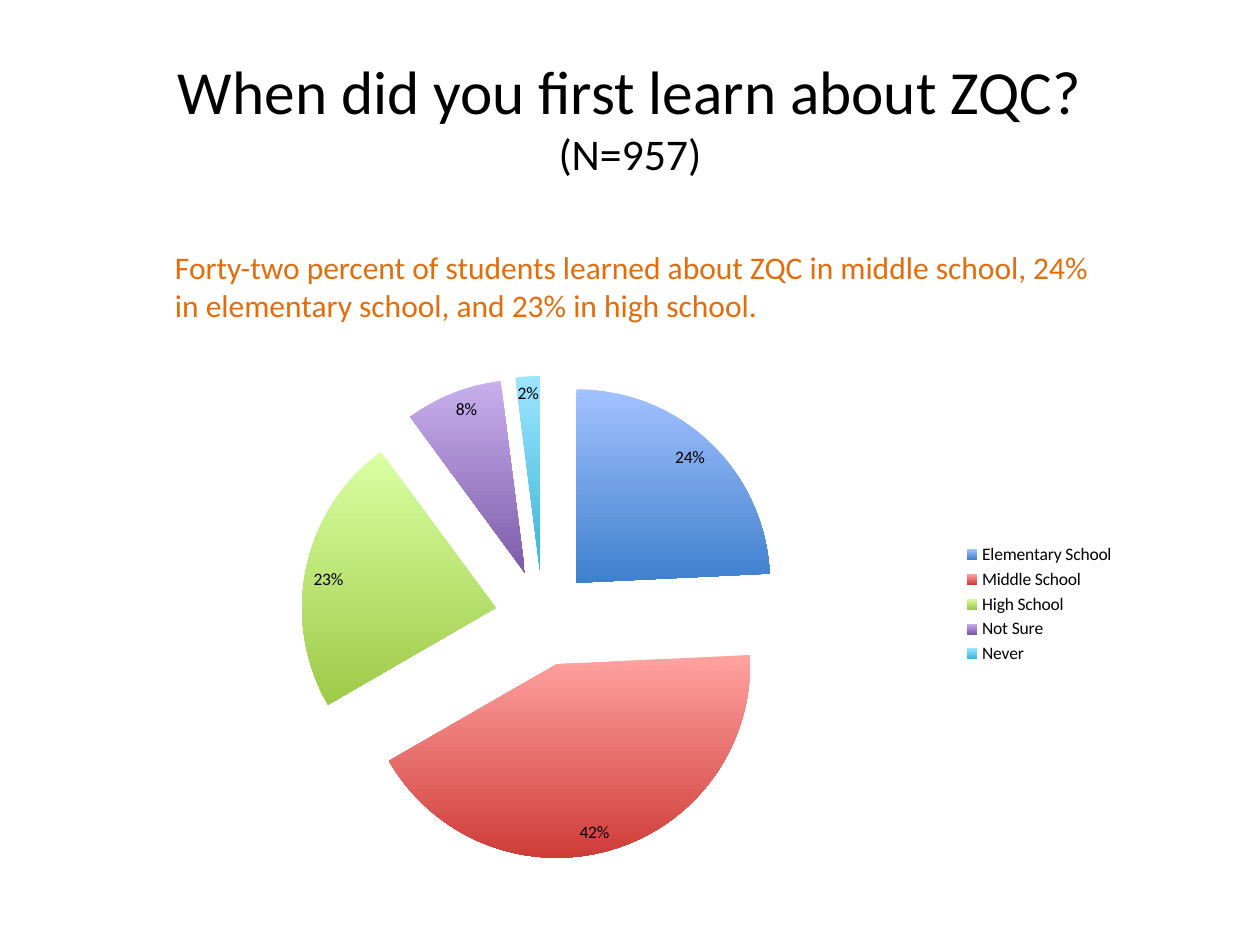
from typing import NamedTuple

from lxml import etree
from pptx import Presentation
from pptx.chart.data import CategoryChartData
from pptx.dml.color import RGBColor
from pptx.enum.chart import XL_CHART_TYPE, XL_LABEL_POSITION, XL_LEGEND_POSITION
from pptx.enum.text import MSO_ANCHOR, PP_ALIGN
from pptx.util import Inches, Pt

PIE = XL_CHART_TYPE.PIE_EXPLODED
INSIDE_END = XL_LABEL_POSITION.INSIDE_END
RIGHT = XL_LEGEND_POSITION.RIGHT
TOP, MIDDLE = MSO_ANCHOR.TOP, MSO_ANCHOR.MIDDLE
LEFT, CENTER = PP_ALIGN.LEFT, PP_ALIGN.CENTER

FONT = "Calibri"
COLLEGE = "ZQC"
BLACK = RGBColor(0x00, 0x00, 0x00)
ORANGE = RGBColor(0xE4, 0x6C, 0x0A)
CHART_NS = "http://schemas.openxmlformats.org/drawingml/2006/chart"


class Slice(NamedTuple):
    label: str
    share: float
    top_color: RGBColor
    bottom_color: RGBColor


SLICES = [
    Slice("Elementary School", 0.24, RGBColor(0xA3, 0xC1, 0xFF), RGBColor(0x3F, 0x80, 0xCD)),
    Slice("Middle School", 0.42, RGBColor(0xFF, 0xA3, 0xA1), RGBColor(0xCF, 0x3C, 0x38)),
    Slice("High School", 0.23, RGBColor(0xD9, 0xFF, 0xA2), RGBColor(0x9E, 0xCA, 0x48)),
    Slice("Not Sure", 0.08, RGBColor(0xC7, 0xAF, 0xED), RGBColor(0x7E, 0x5B, 0xA9)),
    Slice("Never", 0.02, RGBColor(0x9E, 0xE5, 0xFF), RGBColor(0x38, 0xB6, 0xD8)),
]


def add_text(page, text: str, *, left: float, top: float, width: float, height: float,
             sizes: list[float], color: RGBColor, align=LEFT, anchor=TOP) -> None:
    """Add one paragraph; each line of the text takes the matching size."""
    box = page.shapes.add_textbox(Inches(left), Inches(top), Inches(width), Inches(height))
    frame = box.text_frame
    frame.word_wrap = True
    frame.vertical_anchor = anchor
    para = frame.paragraphs[0]
    para.alignment = align
    for index, (line, size) in enumerate(zip(text.split("\n"), sizes)):
        if index:
            para.add_line_break()
        span = para.add_run()
        span.text = line
        span.font.name = FONT
        span.font.size = Pt(size)
        span.font.color.rgb = color


def place_plot(chart, **fractions: float) -> None:
    """Fix the inner plot area as fractions (x, y, w, h) of the chart."""
    plot_area = chart.plots[0]._element.getparent()
    for old in plot_area.findall(f"{{{CHART_NS}}}layout"):
        plot_area.remove(old)
    layout = etree.Element(f"{{{CHART_NS}}}layout")
    manual = etree.SubElement(layout, f"{{{CHART_NS}}}manualLayout")
    settings = {"layoutTarget": "inner", "xMode": "edge", "yMode": "edge", **fractions}
    for name, value in settings.items():
        etree.SubElement(manual, f"{{{CHART_NS}}}{name}", val=str(value))
    plot_area.insert(0, layout)


def add_pie(page, slices: list[Slice]) -> None:
    data = CategoryChartData(number_format="0%")
    data.categories = [part.label for part in slices]
    data.add_series("Series 1", [part.share for part in slices])
    chart = page.shapes.add_chart(
        PIE, Inches(0.95), Inches(2.62), Inches(8), Inches(4.35), data).chart
    chart.has_title = False
    chart.font.name = FONT
    chart.font.size = Pt(10)
    chart.font.color.rgb = BLACK
    chart.has_legend = True
    chart.legend.position = RIGHT
    chart.legend.include_in_layout = False
    place_plot(chart, x=0.18, y=0.08, w=0.48, h=0.89)

    plot = chart.plots[0]
    plot.vary_by_categories = True
    plot.has_data_labels = True
    labels = plot.data_labels
    labels.show_value = True
    labels.show_percentage = False
    labels.number_format = "0%"
    labels.number_format_is_linked = False
    labels.position = INSIDE_END

    series = plot.series[0]
    for explosion in series._element.findall(f"{{{CHART_NS}}}explosion"):
        explosion.set("val", "25")
    for index, part in enumerate(slices):
        style = series.points[index].format
        style.line.fill.background()
        style.fill.gradient()
        style.fill.gradient_angle = 270
        for stop, color in zip(style.fill.gradient_stops, (part.top_color, part.bottom_color)):
            stop.color.rgb = color


def main() -> None:
    deck = Presentation()
    deck.slide_width, deck.slide_height = Inches(10), Inches(7.5)
    page = deck.slides.add_slide(deck.slide_layouts[6])
    add_text(page, f"When did you first learn about {COLLEGE}?\n(N=957)",
             left=0.5, top=0.3, width=9, height=1.25, sizes=[35, 25],
             color=BLACK, align=CENTER, anchor=MIDDLE)
    add_pie(page, SLICES)
    add_text(page, f"Forty-two percent of students learned about {COLLEGE} in middle school, "
             "24% in elementary school, and 23% in high school.",
             left=1.29, top=1.92, width=7.65, height=0.71, sizes=[18], color=ORANGE)
    deck.save("out.pptx")


if __name__ == "__main__":
    main()
